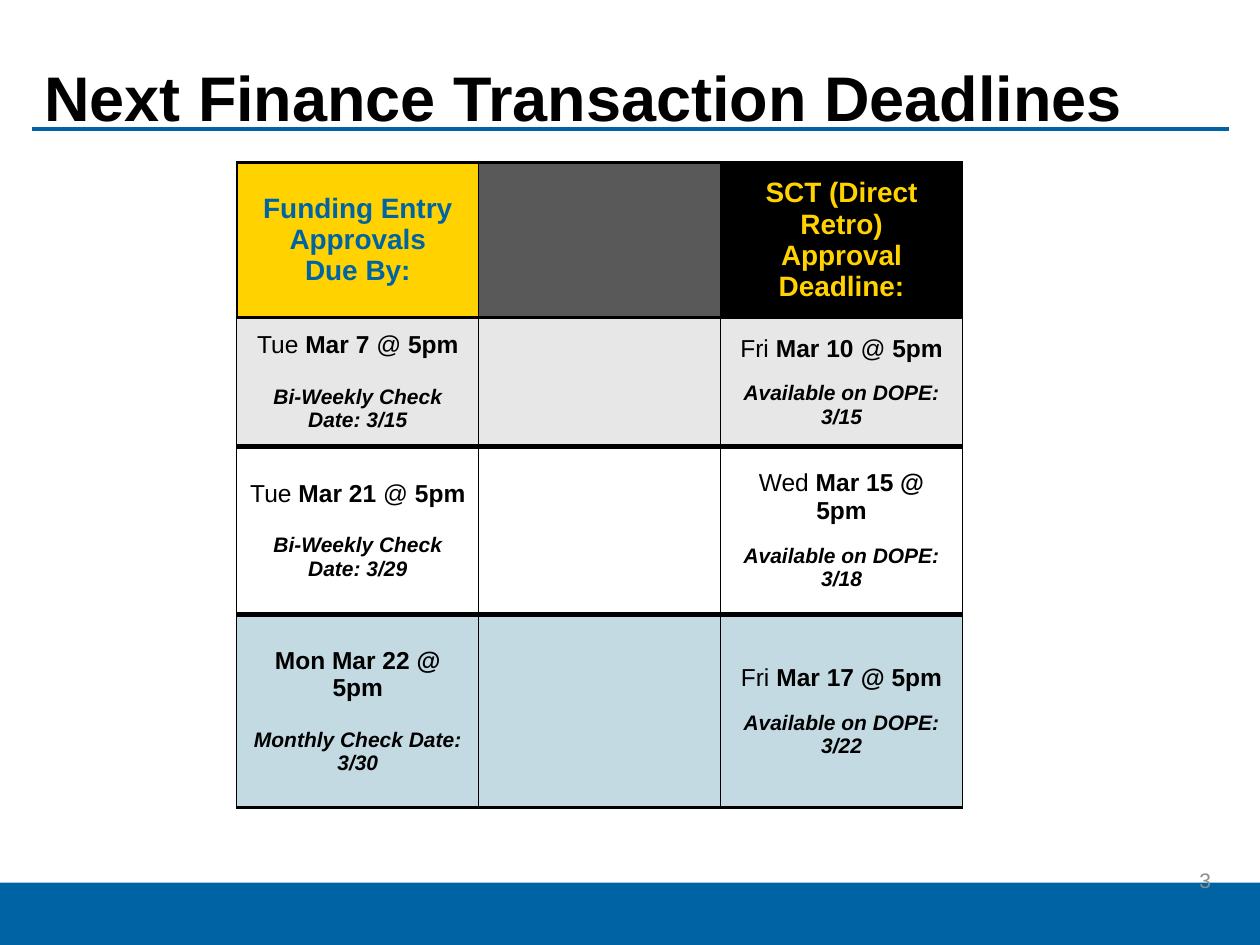
from collections import namedtuple

from lxml.etree import SubElement
from pptx import Presentation
from pptx.dml.color import RGBColor
from pptx.enum.shapes import MSO_CONNECTOR, MSO_SHAPE
from pptx.enum.text import MSO_ANCHOR, PP_ALIGN
from pptx.oxml.ns import qn
from pptx.util import Inches, Pt

BLUE = RGBColor(0x00, 0x64, 0xA4)
GOLD = RGBColor(0xFF, 0xD2, 0x00)
BLACK = RGBColor(0x00, 0x00, 0x00)
WHITE = RGBColor(0xFF, 0xFF, 0xFF)
DARK_GRAY = RGBColor(0x59, 0x59, 0x59)
LIGHT_GRAY = RGBColor(0xE7, 0xE7, 0xE7)
PALE_BLUE = RGBColor(0xC3, 0xDA, 0xE3)
NUMBER_GRAY = RGBColor(0x8C, 0x8C, 0x8C)

SLIDE_WIDTH, SLIDE_HEIGHT = Inches(10), Inches(7.5)
Box = namedtuple("Box", "left top width height")
Deadline = namedtuple("Deadline", "fill bottom_border funding transfer")

HEADERS = [
    (["Funding Entry Approvals", "Due By:"], GOLD, BLUE),
    ([], DARK_GRAY, WHITE),
    (["SCT (Direct Retro)", "Approval Deadline:"], BLACK, GOLD),
]
DEADLINES = [
    Deadline(LIGHT_GRAY, 3,
             ("Tue *Mar 7 *@ *5pm", "Bi-Weekly Check Date: 3/15"),
             ("Fri *Mar 10 *@ *5pm", "Available on DOPE: 3/15")),
    Deadline(WHITE, 3,
             ("Tue *Mar 21 *@ *5pm", "Bi-Weekly Check Date: 3/29"),
             ("Wed *Mar 15 @ 5pm", "Available on DOPE: 3/18")),
    Deadline(PALE_BLUE, 2,
             ("*Mon Mar 22 @ 5pm", "Monthly Check Date: 3/30"),
             ("Fri *Mar 17 @ 5pm", "Available on DOPE: 3/22")),
]
ROW_SHARES = [0.24, 0.2, 0.26, 0.3]
FUNDING_GAP, TRANSFER_GAP = 15, 11


def share_box(left, top, width, height):
    """Turn shares of the slide size into a box of lengths."""
    return Box(int(SLIDE_WIDTH * left), int(SLIDE_HEIGHT * top),
               int(SLIDE_WIDTH * width), int(SLIDE_HEIGHT * height))


def format_font(font, color, **values):
    """Apply the slide font, a colour and any other font values."""
    for name, value in {"name": "Arial", "bold": False, "italic": False, **values}.items():
        setattr(font, name, value)
    font.color.rgb = color


def add_runs(paragraph, text, color, **values):
    """Write text whose weight switches at each asterisk."""
    for position, part in enumerate(text.split("*")):
        if part:
            run = paragraph.add_run()
            run.text = part
            format_font(run.font, color, **{"bold": position % 2 == 1, **values})


def set_borders(cell, **widths):
    """Draw black cell borders with point widths keyed by side."""
    properties = cell._tc.get_or_add_tcPr()
    for side in "LRTB":
        line = SubElement(properties, qn(f"a:ln{side}"), w=str(Pt(widths[side])))
        fill = SubElement(line, qn("a:solidFill"))
        SubElement(fill, qn("a:srgbClr"), val=str(BLACK))


def style_cell(cell, fill, **widths):
    """Set the borders, fill and vertical anchor of a cell."""
    set_borders(cell, **widths)
    cell.fill.solid()
    cell.fill.fore_color.rgb = fill
    cell.vertical_anchor = MSO_ANCHOR.MIDDLE


def add_cell_paragraph(cell, index):
    """Return a centred paragraph, reusing the first one of the cell."""
    frame = cell.text_frame
    paragraph = frame.add_paragraph() if index else frame.paragraphs[0]
    paragraph.alignment = PP_ALIGN.CENTER
    return paragraph


def fill_deadline_cell(cell, texts, gap):
    """Write the deadline and the italic note below it."""
    deadline, note = texts
    add_runs(add_cell_paragraph(cell, 0), deadline, BLACK, size=Pt(14))
    paragraph = add_cell_paragraph(cell, 1)
    paragraph.space_before = Pt(gap)
    add_runs(paragraph, note, BLACK, size=Pt(12), bold=True, italic=True)


def add_deadline_table(slide, box):
    """Build the deadline table inside the box."""
    table = slide.shapes.add_table(len(ROW_SHARES), len(HEADERS), *box).table
    for column in table.columns:
        column.width = box.width // len(HEADERS)
    for row, share in zip(table.rows, ROW_SHARES):
        row.height = int(box.height * share)
    for column, (lines, fill, color) in enumerate(HEADERS):
        cell = table.cell(0, column)
        style_cell(cell, fill, L=1, R=1, T=2, B=2)
        for index, line in enumerate(lines):
            add_runs(add_cell_paragraph(cell, index), line, color, size=Pt(16), bold=True)
    top_border = 2
    for row, deadline in enumerate(DEADLINES, 1):
        for column in range(len(HEADERS)):
            right_border = 1 if column == len(HEADERS) - 1 else 0.5
            style_cell(table.cell(row, column), deadline.fill, L=0.5, R=right_border,
                       T=top_border, B=deadline.bottom_border)
        fill_deadline_cell(table.cell(row, 0), deadline.funding, FUNDING_GAP)
        fill_deadline_cell(table.cell(row, 2), deadline.transfer, TRANSFER_GAP)
        top_border = deadline.bottom_border


def add_title(slide, box):
    """Place the title and the rule that runs across its box."""
    rule_top = box.top + int(box.height * 0.73)
    rule = slide.shapes.add_connector(MSO_CONNECTOR.STRAIGHT, box.left, rule_top,
                                      box.left + box.width, rule_top)
    rule.line.color.rgb = BLUE
    rule.line.width = Pt(2.25)
    SubElement(rule._element.spPr, qn("a:effectLst"))
    title = slide.shapes.title
    for name, value in box._asdict().items():
        setattr(title, name, value)
    title.text_frame.vertical_anchor = MSO_ANCHOR.MIDDLE
    paragraph = title.text_frame.paragraphs[0]
    paragraph.alignment = PP_ALIGN.LEFT
    paragraph.line_spacing = 0.9
    add_runs(paragraph, "Next Finance Transaction Deadlines", BLACK, size=Pt(36), bold=True)


def add_footer(slide, band_box, number_box):
    """Draw the bottom band and the slide number."""
    band = slide.shapes.add_shape(MSO_SHAPE.RECTANGLE, *band_box)
    band.shadow.inherit = False
    band.fill.solid()
    band.fill.fore_color.rgb = BLUE
    band.line.fill.background()
    frame = slide.shapes.add_textbox(*number_box).text_frame
    frame.word_wrap = True
    frame.vertical_anchor = MSO_ANCHOR.MIDDLE
    frame.paragraphs[0].alignment = PP_ALIGN.RIGHT
    add_runs(frame.paragraphs[0], "3", NUMBER_GRAY, size=Pt(12))


def main():
    """Build the slide and save it."""
    presentation = Presentation()
    presentation.slide_width, presentation.slide_height = SLIDE_WIDTH, SLIDE_HEIGHT
    slide = presentation.slides.add_slide(presentation.slide_layouts[5])
    add_footer(slide, share_box(0, 0.934, 1, 0.066), share_box(0.746, 0.905, 0.225, 0.053))
    add_title(slide, share_box(0.025, 0.041, 0.95, 0.131))
    add_deadline_table(slide, share_box(0.188, 0.172, 0.576, 0.683))
    presentation.save("out.pptx")


if __name__ == "__main__":
    main()
